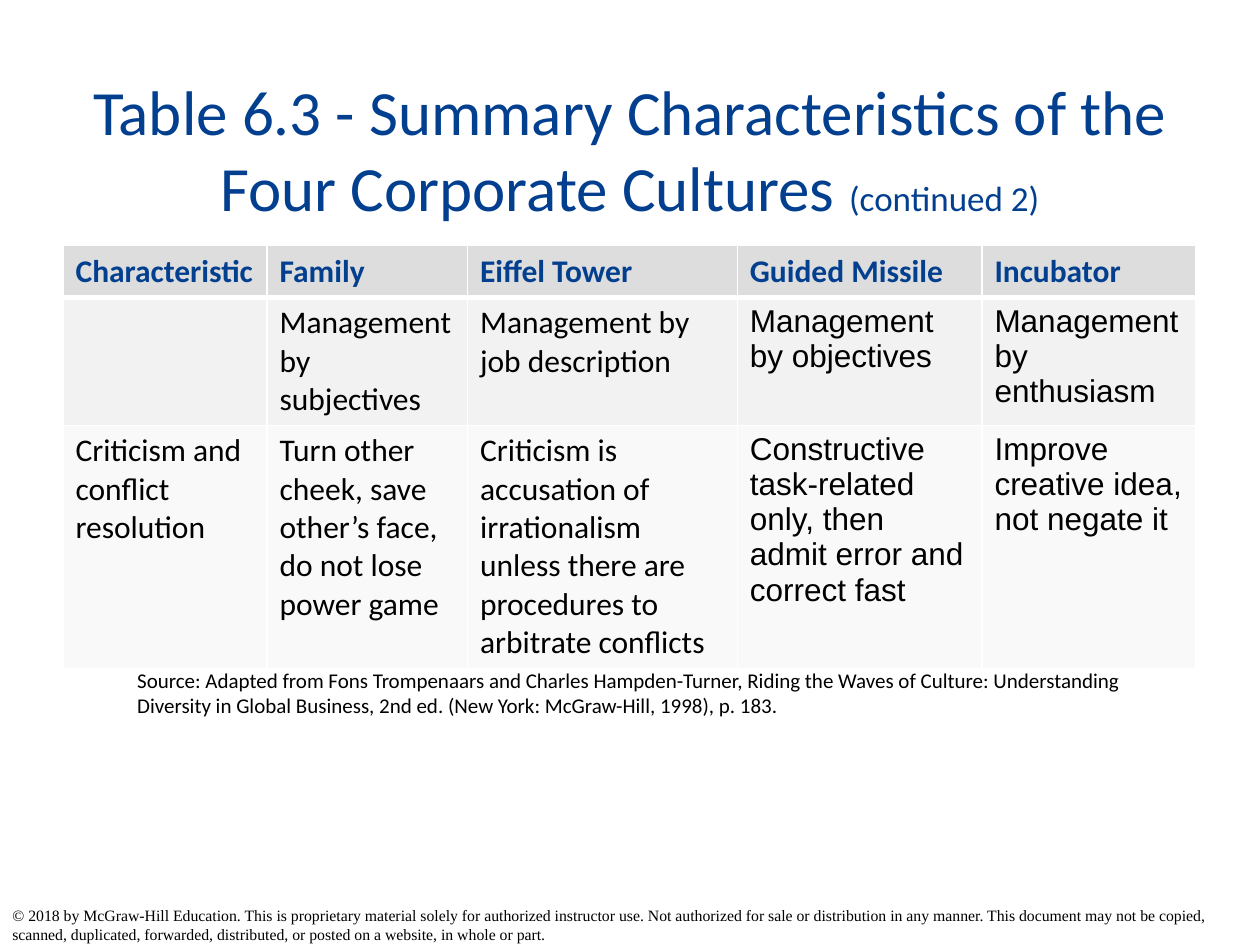
from dataclasses import dataclass

from lxml import etree
from pptx import Presentation
from pptx import util as u
from pptx.dml.color import RGBColor
from pptx.enum import text
from pptx.oxml import ns


@dataclass(frozen=True)
class Theme:
    blue: str = "033F8F"
    black: str = "000000"
    white: str = "FFFFFF"
    row_fills: tuple = ("DDDDDD", "F2F2F2", "F9F9F9")
    title_size: float = 36
    suffix_size: float = 20
    table_size: float = 18
    source_size: float = 12
    notice_size: float = 9
    main_font: str = "Calibri"
    alternate_font: str = "Arial"
    notice_font: str = "Times New Roman"


THEME = Theme()

TITLE = "Table 6.3 - Summary Characteristics of the Four Corporate Cultures "
SOURCE = ("Source: Adapted from Fons Trompenaars and Charles Hampden-Turner, "
          "Riding the Waves of Culture: Understanding Diversity in Global Business, "
          "2nd ed. (New York: McGraw-Hill, 1998), p. 183.")
NOTICE = ("© 2018 by McGraw-Hill Education. This is proprietary material solely for "
          "authorized instructor use. Not authorized for sale or distribution in any "
          "manner. This document may not be copied, scanned, duplicated, forwarded, "
          "distributed, or posted on a website, in whole or part.")

COLUMN_WIDTHS = (116.6, 114.6, 154.2, 139.8, 122.4)
ROW_HEIGHTS = (29.5, 73, 139)
CULTURES = (
    ("Characteristic", "Family", "Eiffel Tower", "Guided Missile", "Incubator"),
    ("", "Management by subjectives", "Management by job description",
     "Management by objectives", "Management by enthusiasm"),
    ("Criticism and conflict resolution",
     "Turn other cheek, save other’s face, do not lose power game",
     "Criticism is accusation of irrationalism unless there are procedures "
     "to arbitrate conflicts",
     "Constructive task-related only, then admit error and correct fast",
     "Improve creative idea, not negate it"),
)


def set_font(font, size, color, name=THEME.main_font, bold=False):
    values = {"size": u.Pt(size), "name": name, "bold": bold}
    for key, value in values.items():
        setattr(font, key, value)
    font.color.rgb = RGBColor.from_string(color)


def add_text(page, place, spans, align=text.PP_ALIGN.LEFT):
    """Add a one-paragraph box; each span is (words, font values)."""
    box = page.shapes.add_textbox(*(u.Pt(length) for length in place))
    frame = box.text_frame
    values = {"word_wrap": True, "auto_size": text.MSO_AUTO_SIZE.NONE,
              "vertical_anchor": text.MSO_ANCHOR.TOP}
    for key, value in values.items():
        setattr(frame, key, value)
    para = frame.paragraphs[0]
    para.alignment = align
    for words, font_values in spans:
        span = para.add_run()
        span.text = words
        set_font(span.font, **font_values)


def set_borders(cell, widths):
    """Draw white cell borders; widths maps the sides L, R, T, B to points."""
    properties = cell._tc.get_or_add_tcPr()
    for side, width in widths.items():
        line = etree.SubElement(properties, ns.qn(f"a:ln{side}"), w=str(u.Pt(width)))
        fill = etree.SubElement(line, ns.qn("a:solidFill"))
        etree.SubElement(fill, ns.qn("a:srgbClr"), val=THEME.white)


def fill_cell(cell, words, row, column):
    header = row == 0
    # The rule under the header is thicker than the others
    set_borders(cell, {"L": 1, "R": 1, "T": 3 if row == 1 else 1, "B": 3 if header else 1})
    cell.fill.solid()
    cell.fill.fore_color.rgb = RGBColor.from_string(THEME.row_fills[row])
    para = cell.text_frame.paragraphs[0]
    name = THEME.alternate_font if not header and column >= 3 else THEME.main_font
    if words:
        font = para.add_run().font
        para.runs[0].text = words
    else:
        font = para.font
    set_font(font, THEME.table_size, THEME.blue if header else THEME.black, name, header)


def add_culture_table(page, left, top):
    table = page.shapes.add_table(
        len(ROW_HEIGHTS), len(COLUMN_WIDTHS), u.Pt(left), u.Pt(top),
        u.Pt(sum(COLUMN_WIDTHS)), u.Pt(sum(ROW_HEIGHTS))).table
    table.horz_banding = False
    for column, width in zip(table.columns, COLUMN_WIDTHS):
        column.width = u.Pt(width)
    for row, height in zip(table.rows, ROW_HEIGHTS):
        row.height = u.Pt(height)
    for row, entries in enumerate(CULTURES):
        for column, words in enumerate(entries):
            fill_cell(table.cell(row, column), words, row, column)


def main():
    deck = Presentation()
    deck.slide_width, deck.slide_height = u.Pt(720), u.Pt(540)
    page = deck.slides.add_slide(deck.slide_layouts[6])

    # Copyright notice
    add_text(page, (0, 514, 720, 14), [
        (NOTICE, {"size": THEME.notice_size, "color": THEME.black,
                  "name": THEME.notice_font})])

    # Title
    add_text(page, (36, 38, 648, 90), [
        (TITLE, {"size": THEME.title_size, "color": THEME.blue}),
        ("(continued 2)", {"size": THEME.suffix_size, "color": THEME.blue}),
    ], text.PP_ALIGN.CENTER)

    # Source line
    add_text(page, (71.3, 378, 577.5, 44.6), [
        (SOURCE, {"size": THEME.source_size, "color": THEME.black})])

    # Culture comparison
    add_culture_table(page, 36, 140.4)

    deck.save("out.pptx")


if __name__ == "__main__":
    main()
